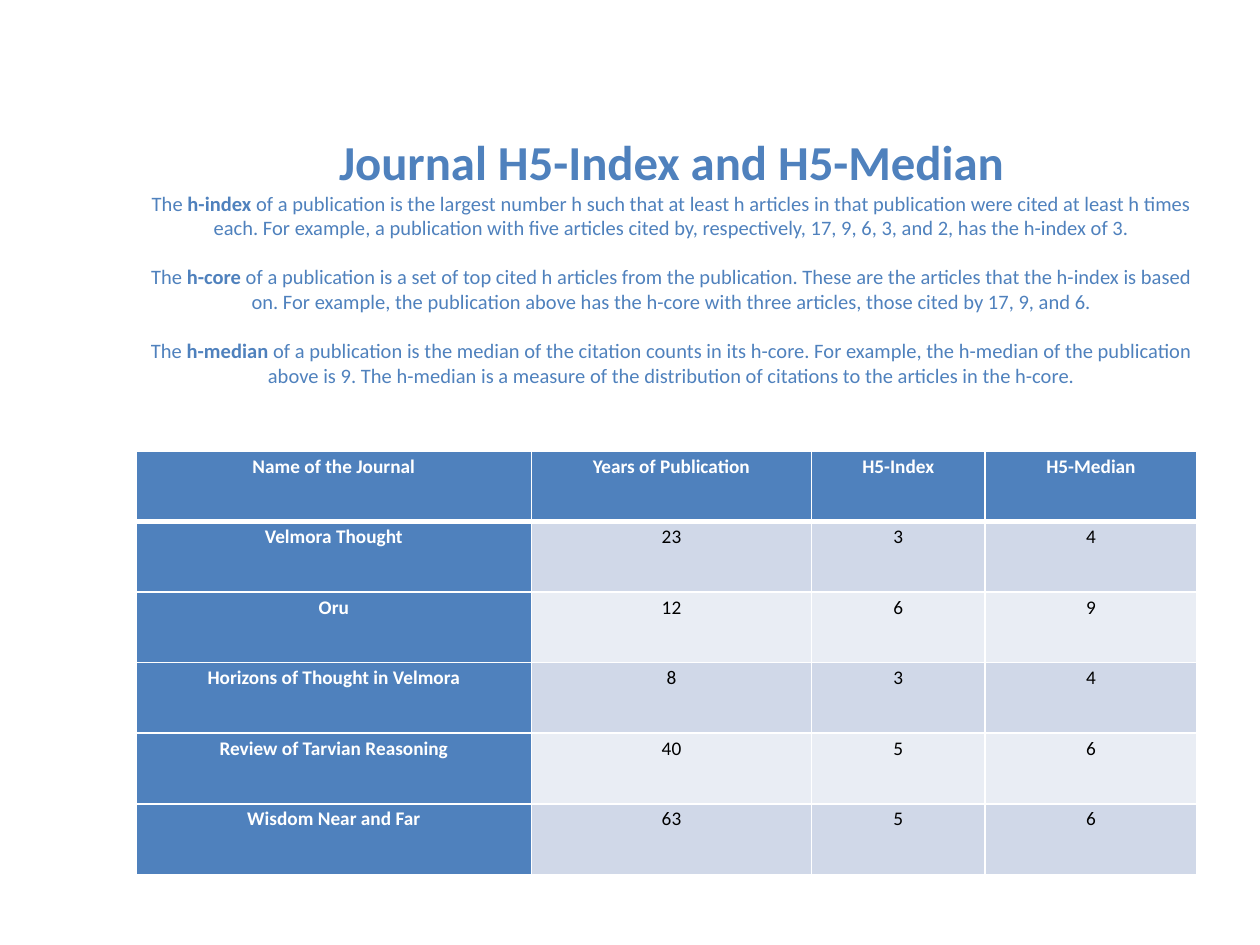
from lxml.etree import SubElement
from pptx import Presentation
from pptx.dml.color import RGBColor
from pptx.enum.text import MSO_ANCHOR as Anchor, PP_ALIGN as Align
from pptx.oxml.ns import qn
from pptx.util import Inches, Pt

BLUE = RGBColor(0x4F, 0x81, 0xBD)
DARK_BAND = RGBColor(0xD0, 0xD8, 0xE8)
LIGHT_BAND = RGBColor(0xE9, 0xED, 0xF4)
WHITE = RGBColor(0xFF, 0xFF, 0xFF)
BLACK = RGBColor(0, 0, 0)
FONT = "Calibri"

TITLE = "Journal H5-Index and H5-Median"
DEFINITIONS = [
    ("h-index", " of a publication is the largest number h such that at least h articles "
     "in that publication were cited at least h times each. For example, a publication with "
     "five articles cited by, respectively, 17, 9, 6, 3, and 2, has the h-index of 3."),
    ("h-core", " of a publication is a set of top cited h articles from the publication. "
     "These are the articles that the h-index is based on. For example, the publication above "
     "has the h-core with three articles, those cited by 17, 9, and 6."),
    ("h-median", " of a publication is the median of the citation counts in its h-core. "
     "For example, the h-median of the publication above is 9. The h-median is a measure of "
     "the distribution of citations to the articles in the h-core."),
]
COLUMN_WIDTHS = [3.14, 2.22, 1.38, 1.68]
ROW_HEIGHT = 0.56
JOURNALS = [
    ("Name of the Journal", "Years of Publication", "H5-Index", "H5-Median"),
    ("Velmora Thought", "23", "3", "4"),
    ("Oru", "12", "6", "9"),
    ("Horizons of Thought in Velmora", "8", "3", "4"),
    ("Review of Tarvian Reasoning", "40", "5", "6"),
    ("Wisdom Near and Far", "63", "5", "6"),
]


def format_run(run, size, color, bold):
    """Set the font of a run."""
    run.font.name = FONT
    run.font.size = Pt(size)
    run.font.color.rgb = color
    run.font.bold = bold


def add_run(paragraph, text, size, bold):
    """Append a blue run to a paragraph."""
    run = paragraph.add_run()
    run.text = text
    format_run(run, size, BLUE, bold)


def add_heading(slide):
    """Add the title and the definitions below it."""
    shape = slide.shapes.add_textbox(Inches(1.08), Inches(1), Inches(8.5), Inches(2.33))
    text_frame = shape.text_frame
    text_frame.word_wrap = True
    text_frame.vertical_anchor = Anchor.TOP
    title = text_frame.paragraphs[0]
    title.alignment = Align.CENTER
    add_run(title, TITLE, 27.9, True)
    for index, (term, meaning) in enumerate(DEFINITIONS):
        paragraph = text_frame.add_paragraph()
        paragraph.alignment = Align.CENTER
        paragraph.space_before = Pt(14 if index else 0)
        for text, bold in (("The ", False), (term, True), (meaning, False)):
            add_run(paragraph, text, 11.7, bold)


def add_border(cell, side, width):
    """Draw a white border on one side of a cell."""
    line = SubElement(cell._tc.get_or_add_tcPr(), qn(f"a:ln{side}"), w=str(Pt(width)))
    fill = SubElement(line, qn("a:solidFill"))
    SubElement(fill, qn("a:srgbClr"), val=str(WHITE))


def fill_cell(cell, text, row, column):
    """Write and style one cell of the journal table."""
    is_heading = row == 0 or column == 0
    cell.margin_left = cell.margin_right = Inches(0.07)
    cell.margin_top = cell.margin_bottom = 0
    cell.vertical_anchor = Anchor.TOP
    for side in "LRTB":
        under_header = (row, side) in ((0, "B"), (1, "T"))
        add_border(cell, side, 3 if under_header else 1)
    cell.fill.solid()
    band = DARK_BAND if row % 2 else LIGHT_BAND
    cell.fill.fore_color.rgb = BLUE if is_heading else band
    cell.text_frame.text = text
    paragraph = cell.text_frame.paragraphs[0]
    paragraph.alignment = Align.CENTER
    paragraph.line_spacing = 1.15
    format_run(paragraph.runs[0], 11, WHITE if is_heading else BLACK, is_heading)


def add_journal_table(slide):
    """Add the table of journals and their citation measures."""
    frame = slide.shapes.add_table(
        len(JOURNALS), len(COLUMN_WIDTHS), Inches(1.08), Inches(3.58),
        Inches(sum(COLUMN_WIDTHS)), Inches(ROW_HEIGHT * len(JOURNALS)))
    table = frame.table
    table.first_col = True
    for column, width in zip(table.columns, COLUMN_WIDTHS):
        column.width = Inches(width)
    for row, values in enumerate(JOURNALS):
        table.rows[row].height = Inches(ROW_HEIGHT)
        for column, text in enumerate(values):
            fill_cell(table.cell(row, column), text, row, column)


def main():
    """Build the slide and save it."""
    presentation = Presentation()
    presentation.slide_width = Inches(10)
    presentation.slide_height = Inches(7.5)
    slide = presentation.slides.add_slide(presentation.slide_layouts[6])
    add_heading(slide)
    add_journal_table(slide)
    presentation.save("out.pptx")


if __name__ == "__main__":
    main()
